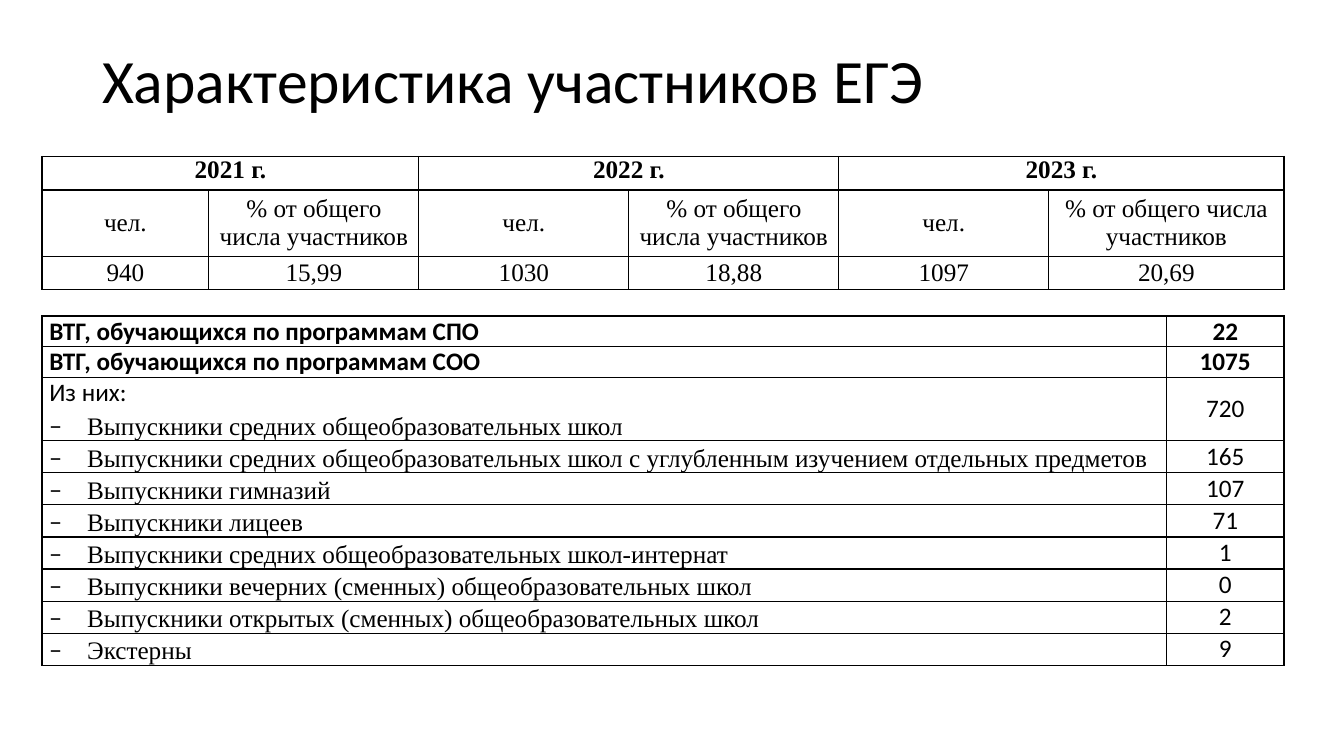
from lxml.etree import SubElement
from pptx import Presentation
from pptx.dml.color import RGBColor as RGB
from pptx.enum.text import MSO_ANCHOR as Anchor, MSO_AUTO_SIZE as Fit, PP_ALIGN as Align
from pptx.oxml import parse_xml
from pptx.oxml.ns import nsdecls, qn
from pptx.util import Pt

PX = 9525  # 96 px to the inch
COLORS = {"ink": "000000"}
SANS, SERIF = "Calibri", "Times New Roman"

YEARS = ["2021 г.", "2022 г.", "2023 г."]
HEADS = ["чел.", "% от общего числа участников"] * 3
TOTALS = ["940", "15,99", "1030", "18,88", "1097", "20,69"]

PROGRAMS = [
    ("ВТГ, обучающихся по программам СПО", "22"),
    ("ВТГ, обучающихся по программам СОО", "1075"),
]
SCHOOLS = [
    ("Выпускники средних общеобразовательных школ", "720"),
    ("Выпускники средних общеобразовательных школ с углубленным изучением отдельных предметов", "165"),
    ("Выпускники гимназий", "107"),
    ("Выпускники лицеев", "71"),
    ("Выпускники средних общеобразовательных школ-интернат", "1"),
    ("Выпускники вечерних (сменных) общеобразовательных школ", "0"),
    ("Выпускники открытых (сменных) общеобразовательных школ", "2"),
    ("Экстерны", "9"),
]


def style(para, face, size=18, bold=False, align=Align.CENTER):
    para.alignment = align
    font = para.font
    font.name, font.size, font.bold = face, Pt(size), bold
    font.color.rgb = RGB.from_string(COLORS["ink"])


def add_dash(para):
    """Give the paragraph a hanging dash and wider lines."""
    para.line_spacing = 1.15
    props = para._p.get_or_add_pPr()
    props.set("marL", str(36 * PX))
    props.set("indent", str(-36 * PX))
    SubElement(props, qn("a:buFont"), typeface=SANS)
    SubElement(props, qn("a:buChar"), char="−")


def frame(cell):
    """Clear the fill, set the insets and rule all four sides."""
    cell.margin_left = cell.margin_right = 7 * PX
    cell.margin_top = cell.margin_bottom = 0
    cell.vertical_anchor = Anchor.MIDDLE
    cell.fill.background()
    props = cell._tc.get_or_add_tcPr()
    for i, side in enumerate("LRTB"):
        props.insert(i, parse_xml(
            f'<a:ln{side} {nsdecls("a")} w="{Pt(1)}"><a:solidFill>'
            f'<a:srgbClr val="{COLORS["ink"]}"/></a:solidFill></a:ln{side}>'))


def add_grid(slide, left, top, widths, heights):
    """Add a plain ruled table and return it."""
    box = [n * PX for n in (left, top, sum(widths), sum(heights))]
    grid = slide.shapes.add_table(len(heights), len(widths), *box).table
    grid.first_row = grid.horz_banding = False
    for col, width in zip(grid.columns, widths):
        col.width = width * PX
    for row, height in zip(grid.rows, heights):
        row.height = height * PX
    for cell in grid.iter_cells():
        frame(cell)
    return grid


def write(cell, text, face, **look):
    cell.text = text
    style(cell.text_frame.paragraphs[0], face, **look)


def add_title(slide, left, top, width, height):
    title = slide.shapes.title
    title.left, title.top, title.width, title.height = (
        n * PX for n in (left, top, width, height))
    text = title.text_frame
    text.text = "Характеристика участников ЕГЭ"
    text.auto_size = Fit.NONE
    text.vertical_anchor = Anchor.MIDDLE
    para = text.paragraphs[0]
    para.line_spacing = 0.9
    style(para, SANS, 44, align=Align.LEFT)


def add_years(slide, left, top):
    grid = add_grid(slide, left, top, [159] + [200] * 4 + [224], [32, 63, 32])
    for i, year in enumerate(YEARS):
        cell = grid.cell(0, 2 * i)
        cell.merge(grid.cell(0, 2 * i + 1))
        write(cell, year, SERIF, bold=True)
        cell.vertical_anchor = Anchor.TOP
    for row, texts in enumerate([HEADS, TOTALS], 1):
        for col, text in enumerate(texts):
            write(grid.cell(row, col), text, SERIF)


def add_groups(slide, left, top):
    heights = [29] * len(PROGRAMS) + [60] + [30] * (len(SCHOOLS) - 1)
    grid = add_grid(slide, left, top, [1071, 112], heights)
    first = len(PROGRAMS)
    for row, (name, count) in enumerate(PROGRAMS + SCHOOLS):
        cell = grid.cell(row, 0)
        bold = row < first
        write(grid.cell(row, 1), count, SANS, bold=bold)
        if bold:
            write(cell, name, SANS, bold=True, align=Align.JUSTIFY)
            continue
        para = cell.text_frame.paragraphs[0]
        align = Align.LEFT
        if row == first:
            align = Align.JUSTIFY
            write(cell, "Из них:", SANS, align=align)
            para = cell.text_frame.add_paragraph()
        para.text = name
        add_dash(para)
        style(para, SERIF, align=align)


def main():
    deck = Presentation()
    deck.slide_width, deck.slide_height = 1280 * PX, 720 * PX
    slide = deck.slides.add_slide(deck.slide_layouts[5])
    add_title(slide, 88, 38, 1104, 84)
    add_years(slide, 40, 149)
    add_groups(slide, 40, 301)
    deck.save("out.pptx")


if __name__ == "__main__":
    main()
